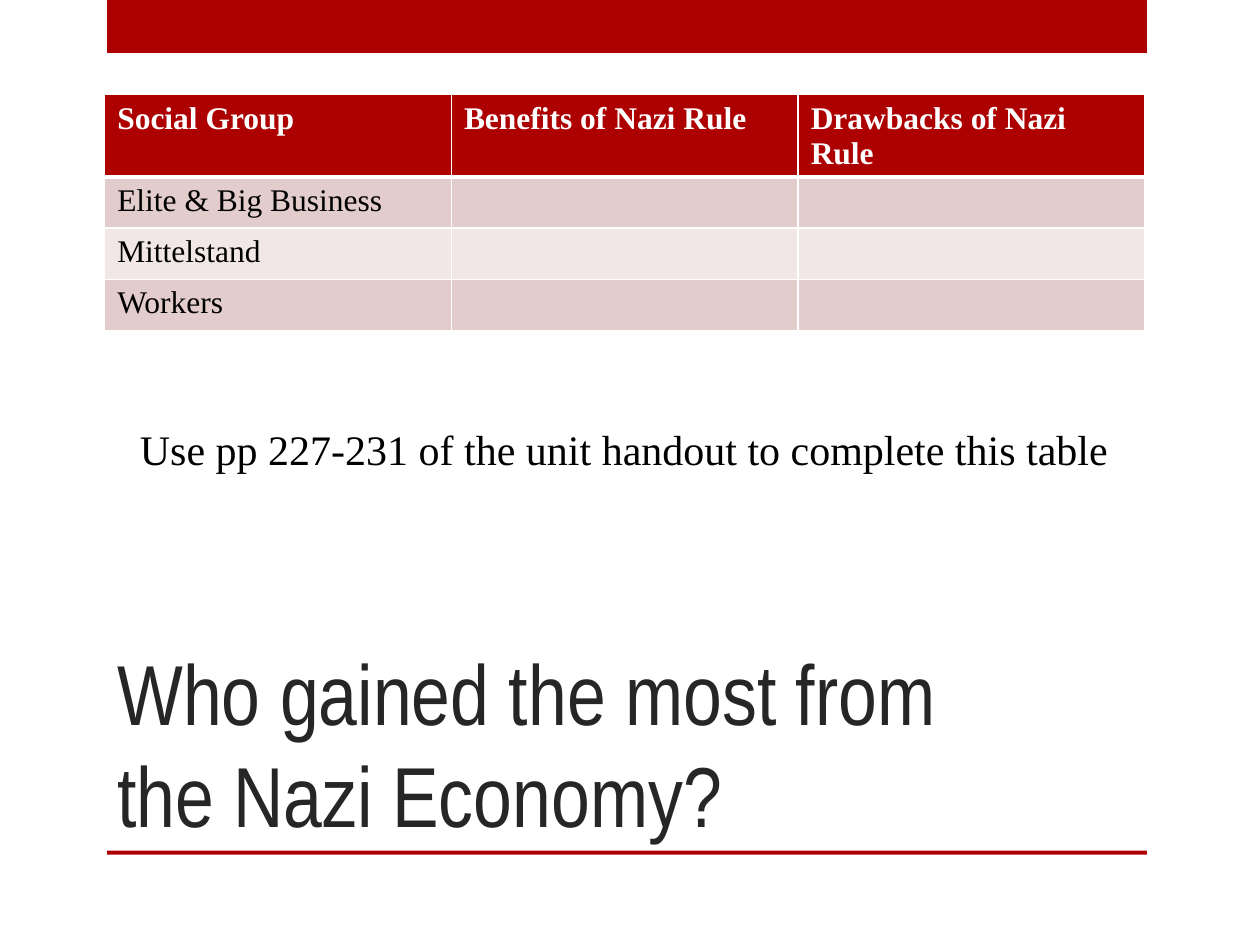
"""Build a slide with a table of social groups above a large title."""
from dataclasses import dataclass

from lxml import etree
from pptx import Presentation
from pptx.dml.color import RGBColor
from pptx.enum import shapes, text
from pptx.oxml import ns
from pptx.util import Cm, Pt

RED, WHITE, BLACK = "AD0101", "FFFFFF", "000000"
BANDS = ("E3CCCC", "F1E7E7")
SERIF = "Times New Roman"
COL_WIDTH, HEAD_HEIGHT, ROW_HEIGHT = 6.99, 1.65, 1.03
ROWS = (
    ("Social Group", "Benefits of Nazi Rule", "Drawbacks of Nazi Rule"),
    ("Elite & Big Business", "", ""),
    ("Mittelstand", "", ""),
    ("Workers", "", ""),
)


@dataclass
class Bar:
    top: float
    height: float


@dataclass
class Style:
    font: str
    size: float
    color: str
    bold: bool = False


BARS = (Bar(0, 1.07), Bar(17.15, 0.08))
TITLE = Style("Arial Narrow", 48.6, "262626")
HEAD = Style(SERIF, 18, WHITE, True)
CELL = Style(SERIF, 18, BLACK)
NOTE = Style(SERIF, 24, BLACK)


def paint(fill, color: str) -> None:
    fill.solid()
    fill.fore_color.rgb = RGBColor.from_string(color)


def add_run(p, words: str, style: Style) -> None:
    r = p.add_run()
    r.text = words
    r.font.name, r.font.size, r.font.bold = style.font, Pt(style.size), style.bold
    paint(r.font.fill, style.color)


def add_bar(s, bar: Bar) -> None:
    sp = s.shapes.add_shape(shapes.MSO_SHAPE.RECTANGLE, Cm(2.16), Cm(bar.top),
                            Cm(20.96), Cm(bar.height))
    sp.shadow.inherit = False
    sp.line.fill.background()
    paint(sp.fill, RED)


def set_border(cell, side: str, width: float) -> None:
    tc_pr = cell._tc.get_or_add_tcPr()
    ln = etree.SubElement(tc_pr, ns.qn(f"a:ln{side}"), w=str(Pt(width)))
    fill = etree.SubElement(ln, ns.qn("a:solidFill"))
    etree.SubElement(fill, ns.qn("a:srgbClr"), val=WHITE)


def fill_cell(cell, words: str, row: int) -> None:
    for side in "LRTB":
        thick = (row == 0 and side == "B") or (row == 1 and side == "T")
        set_border(cell, side, 3 if thick else 1)
    paint(cell.fill, BANDS[(row - 1) % 2] if row else RED)
    if words:
        add_run(cell.text_frame.paragraphs[0], words, CELL if row else HEAD)


def add_groups(s) -> None:
    n_cols = len(ROWS[0])
    height = HEAD_HEIGHT + ROW_HEIGHT * (len(ROWS) - 1)
    table = s.shapes.add_table(len(ROWS), n_cols, Cm(2.11), Cm(1.91),
                               Cm(COL_WIDTH * n_cols), Cm(height)).table
    for col in table.columns:
        col.width = Cm(COL_WIDTH)
    for i, row in enumerate(ROWS):
        table.rows[i].height = Cm(ROW_HEIGHT if i else HEAD_HEIGHT)
        for j, words in enumerate(row):
            fill_cell(table.cell(i, j), words, i)


def add_title(s) -> None:
    sp = s.shapes.title
    sp.left, sp.top, sp.width, sp.height = Cm(2.11), Cm(12.7), Cm(18.85), Cm(4.45)
    tf = sp.text_frame
    tf.word_wrap = True
    tf.auto_size = text.MSO_AUTO_SIZE.NONE
    tf.vertical_anchor = text.MSO_ANCHOR.BOTTOM
    p = tf.paragraphs[0]
    p.alignment = text.PP_ALIGN.LEFT
    add_run(p, "Who gained the most from the Nazi Economy?", TITLE)


def add_note(s) -> None:
    tf = s.shapes.add_textbox(Cm(2.57), Cm(8.41), Cm(20.42), Cm(1.27)).text_frame
    tf.word_wrap = False
    tf.auto_size = text.MSO_AUTO_SIZE.SHAPE_TO_FIT_TEXT
    add_run(tf.paragraphs[0],
            "Use pp 227-231 of the unit handout to complete this table", NOTE)


def main() -> None:
    prs = Presentation()
    prs.slide_width, prs.slide_height = Cm(25.4), Cm(19.05)
    s = prs.slides.add_slide(prs.slide_layouts.get_by_name("Title Only"))
    for bar in BARS:
        add_bar(s, bar)
    add_title(s)
    add_groups(s)
    add_note(s)
    prs.save("out.pptx")


if __name__ == "__main__":
    main()
